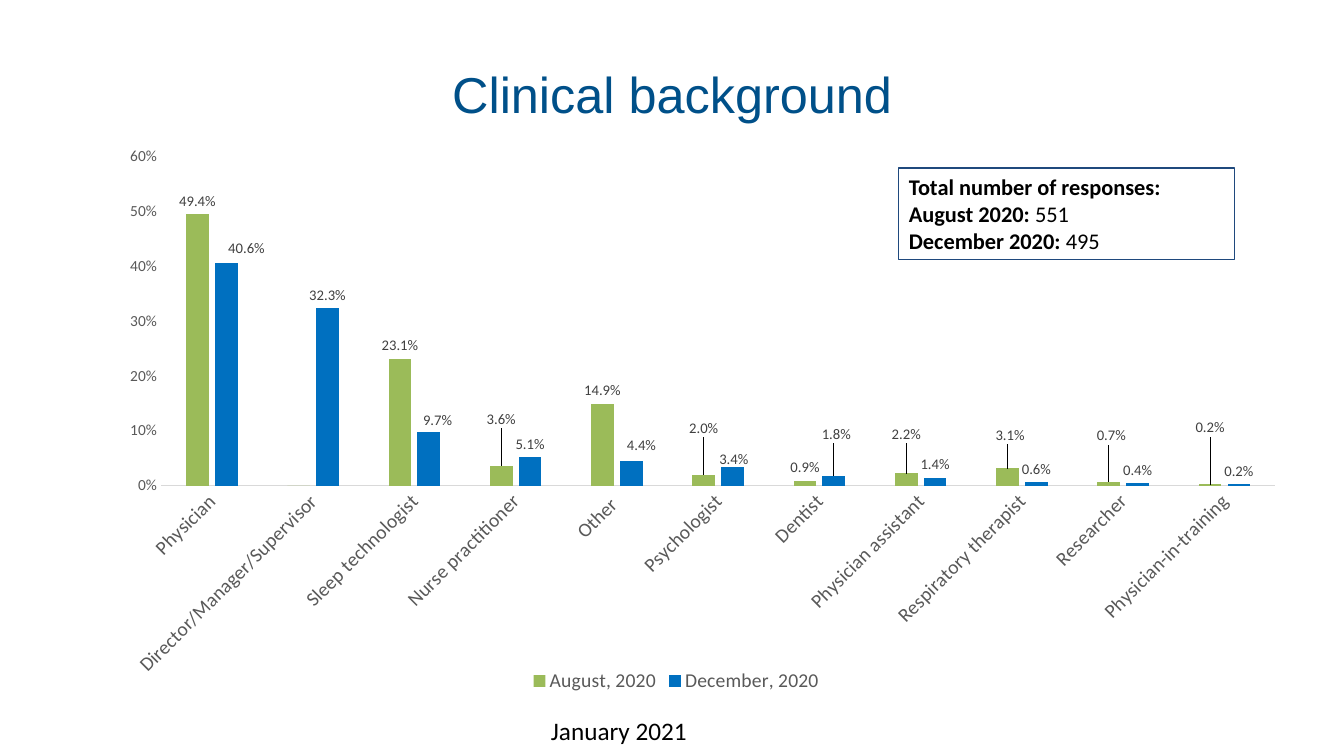
from dataclasses import dataclass, field

from lxml.etree import SubElement
from pptx import Presentation
from pptx.chart.data import CategoryChartData
from pptx.dml.color import RGBColor
from pptx.enum.chart import XL_CHART_TYPE as Chart, XL_LABEL_POSITION as LabelPos
from pptx.enum.chart import XL_LEGEND_POSITION as LegendPos, XL_TICK_MARK as Tick
from pptx.enum.shapes import MSO_SHAPE as Shape
from pptx.enum.text import MSO_ANCHOR as Anchor, PP_ALIGN as Align
from pptx.oxml import parse_xml
from pptx.oxml.ns import nsdecls, qn
from pptx.util import Inches, Pt

NAVY = RGBColor(0x00, 0x50, 0x89)
BORDER = RGBColor(0x1F, 0x49, 0x7D)
BLACK = RGBColor(0x00, 0x00, 0x00)
GRAY = RGBColor(0x59, 0x59, 0x59)
DARK = RGBColor(0x40, 0x40, 0x40)
PALE = RGBColor(0xD9, 0xD9, 0xD9)
GREEN = RGBColor(0x9B, 0xBB, 0x59)
BLUE = RGBColor(0x00, 0x70, 0xC0)

CELL = Inches(1) // 12  # the slide is 160 columns by 90 rows
BODY = "Calibri"
LABEL_FORMAT = "0.0%"


@dataclass
class Area:
    col: float
    row: float
    cols: float
    rows: float

    def box(self) -> list[int]:
        return [round(n * CELL) for n in (self.col, self.row, self.cols, self.rows)]


@dataclass
class Survey:
    name: str
    color: RGBColor
    percents: list[float]
    # label shifts by category, in percent of the chart's width and height
    shifts: dict[int, tuple[float, float]]
    unlabelled: list[int] = field(default_factory=list)


CATEGORIES = ["Physician", "Director/Manager/Supervisor", "Sleep technologist",
              "Nurse practitioner", "Other ", "Psychologist", "Dentist",
              "Physician assistant", "Respiratory therapist", "Researcher",
              "Physician-in-training"]
SURVEYS = [
    Survey("August, 2020", GREEN,
           [49.4, 0, 23.1, 3.6, 14.9, 2, 0.9, 2.2, 3.1, 0.7, 0.2],
           {3: (0, -5.9), 5: (0, -5.8), 7: (0, -4.6), 8: (0.2, -3.6),
            9: (0.2, -5.8), 10: (0, -7.7)}, [1]),
    Survey("December, 2020", BLUE,
           [40.6, 32.3, 9.7, 5.1, 4.4, 3.4, 1.8, 1.4, 0.6, 0.4, 0.2],
           {0: (1.6, -0.2), 2: (0.7, 0.2), 4: (0.8, -0.5), 5: (0.1, 1),
            6: (0.2, -5)}),
]
RESPONSES = [("Total number of responses:", ""), ("August 2020: ", "551"),
             ("December 2020: ", "495")]


def set_font(font, size: float, color: RGBColor, name: str = BODY) -> None:
    font.size, font.name = Pt(size), name
    font.color.rgb = color


def layout(**values: object):
    items = "".join(f'<c:{k} val="{v}"/>' for k, v in values.items())
    return parse_xml(f'<c:layout {nsdecls("c")}><c:manualLayout>{items}'
                     "</c:manualLayout></c:layout>")


def add_text(slide, area: Area, text: str, size: float, color: RGBColor,
             name: str = BODY, align=Align.LEFT, anchor=Anchor.TOP) -> None:
    tf = slide.shapes.add_textbox(*area.box()).text_frame
    tf.word_wrap, tf.vertical_anchor = True, anchor
    p = tf.paragraphs[0]
    p.text, p.alignment = text, align
    set_font(p.font, size, color, name)


def add_responses(slide, area: Area) -> None:
    s = slide.shapes.add_shape(Shape.RECTANGLE, *area.box())
    s.shadow.inherit = False
    s.fill.background()
    s.line.color.rgb, s.line.width = BORDER, Pt(0.75)
    tf = s.text_frame
    tf.word_wrap, tf.vertical_anchor = True, Anchor.TOP
    for i, (caption, count) in enumerate(RESPONSES):
        p = tf.add_paragraph() if i else tf.paragraphs[0]
        p.alignment = Align.LEFT
        set_font(p.font, 16, BLACK)
        r = p.add_run()
        r.text, r.font.bold = caption, True
        if count:
            p.add_run().text = count


def style_series(series, survey: Survey) -> None:
    series.format.fill.solid()
    series.format.fill.fore_color.rgb = survey.color
    series.invert_if_negative = False
    labels = series.data_labels
    labels.show_value, labels.position = True, LabelPos.OUTSIDE_END
    labels.number_format, labels.number_format_is_linked = LABEL_FORMAT, False
    set_font(labels.font, 10.5, DARK)
    for i in [*survey.shifts, *survey.unlabelled]:
        label = series.points[i].data_label
        label.position = LabelPos.OUTSIDE_END
        set_font(label.font, 10.5, DARK)
        node = labels._element.xpath(f"c:dLbl[c:idx/@val='{i}']")[0]
        if i in survey.unlabelled:
            for child in list(node)[1:]:
                node.remove(child)
            SubElement(node, qn("c:delete")).set("val", "1")
        else:
            x, y = survey.shifts[i]
            node.insert(1, layout(x=x / 100, y=y / 100))
            node.insert(2, parse_xml(f'<c:numFmt {nsdecls("c")} '
                                     f'formatCode="{LABEL_FORMAT}" sourceLinked="0"/>'))


def add_survey_chart(slide, area: Area) -> None:
    data = CategoryChartData(number_format=LABEL_FORMAT)
    data.categories = CATEGORIES
    for survey in SURVEYS:
        data.add_series(survey.name, [round(v / 100, 3) for v in survey.percents])
    chart = slide.shapes.add_chart(Chart.COLUMN_CLUSTERED, *area.box(), data).chart
    chart.has_title = False
    set_font(chart.font, 10, BLACK)

    # Columns and their labels
    plot = chart.plots[0]
    plot.gap_width, plot.overlap, plot.vary_by_categories = 219, -27, False
    for series, survey in zip(plot.series, SURVEYS):
        style_series(series, survey)

    # Axes
    cat, val = chart.category_axis, chart.value_axis
    for axis, size in ((cat, 14), (val, 11)):
        axis.major_tick_mark = axis.minor_tick_mark = Tick.NONE
        axis.has_major_gridlines = False
        set_font(axis.tick_labels.font, size, GRAY)
    cat.format.line.color.rgb, cat.format.line.width = PALE, Pt(0.75)
    cat._element.find(qn("c:txPr")).find(qn("a:bodyPr")).set("rot", "-2700000")
    val.format.line.fill.background()
    val.minimum_scale, val.maximum_scale, val.major_unit = 0, 0.6, 0.1
    val.tick_labels.number_format = "0%"
    val.tick_labels.number_format_is_linked = False

    # Legend and plot frame
    chart.has_legend = True
    chart.legend.position = LegendPos.BOTTOM
    chart.legend.include_in_layout = False
    set_font(chart.legend.font, 14, GRAY)
    frame = chart._chartSpace.chart.plotArea
    for old in frame.findall(qn("c:layout")):
        frame.remove(old)
    frame.insert(0, layout(layoutTarget="inner", xMode="edge", yMode="edge",
                           x=0.094, y=0.039, w=0.878, h=0.585))


def main() -> None:
    prs = Presentation()
    prs.slide_width, prs.slide_height = Inches(13.33), Inches(7.5)
    slide = prs.slides.add_slide(prs.slide_layouts[6])

    add_text(slide, Area(8, 3.6, 144, 15), "Clinical background", 36, NAVY,
             "Arial", Align.CENTER, Anchor.MIDDLE)
    add_responses(slide, Area(107, 20, 39.9, 10.9))
    add_survey_chart(slide, Area(5, 16, 151, 67))
    add_text(slide, Area(64.4, 84.6, 50.6, 4.8), "January 2021", 18, BLACK)

    prs.save("out.pptx")


if __name__ == "__main__":
    main()
